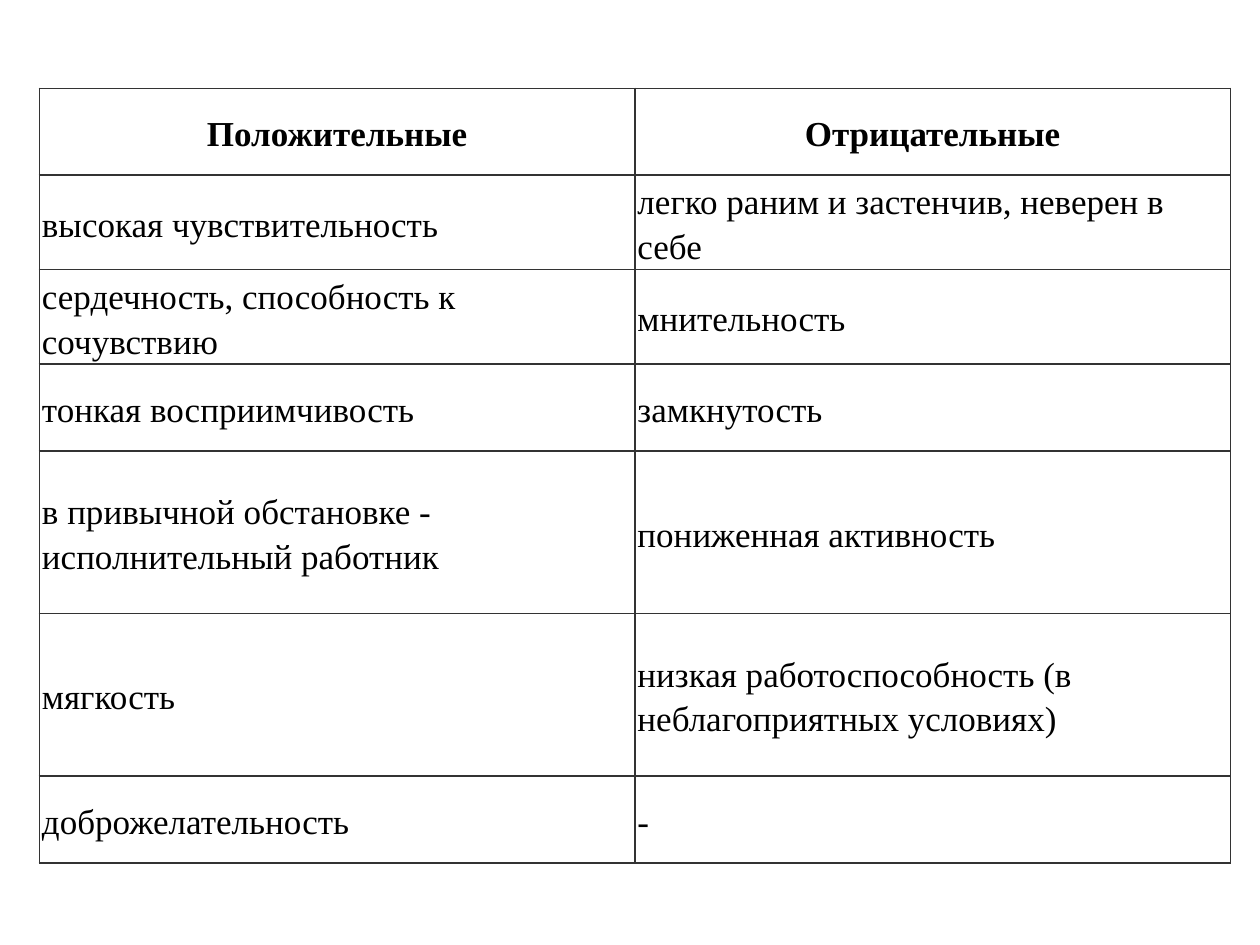
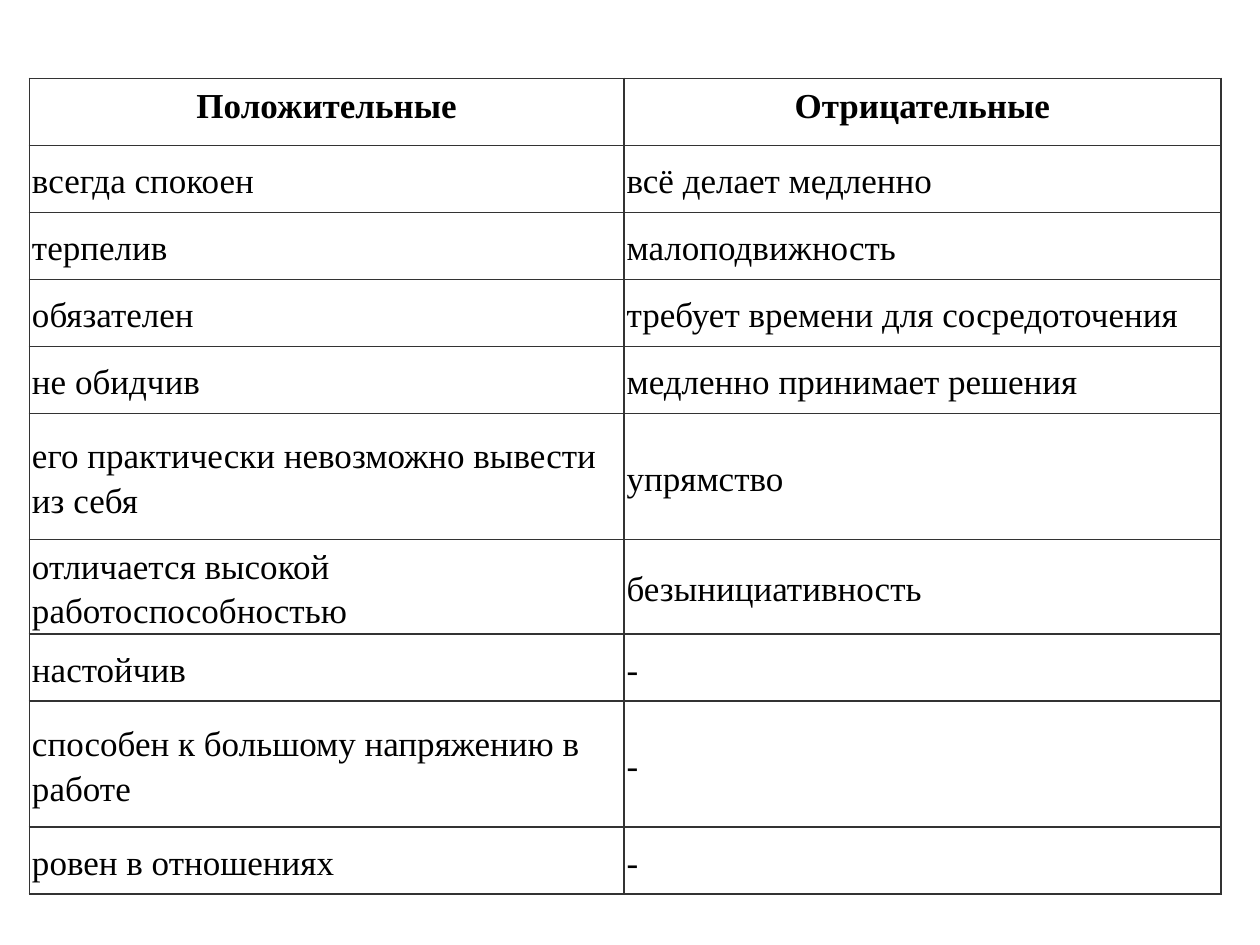
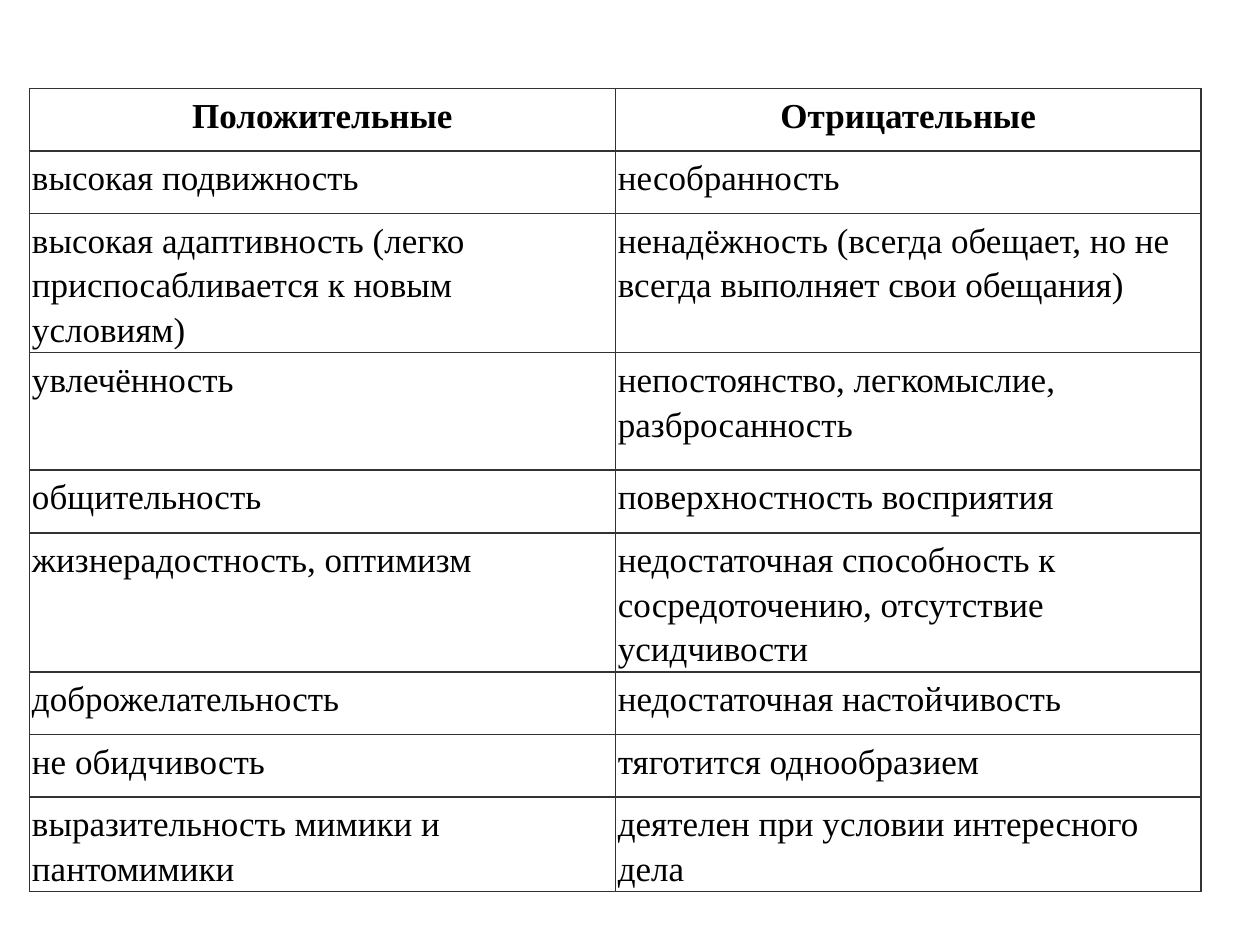
from dataclasses import dataclass

from lxml.etree import SubElement
from pptx import Presentation
from pptx.dml.color import RGBColor
from pptx.enum.text import MSO_ANCHOR, PP_ALIGN
from pptx.oxml.ns import qn
from pptx.util import Pt

FONT = "Times New Roman"
INK = "000000"
PAPER = "FFFFFF"
RULE = "333333"
HEAD = ("Положительные", "Отрицательные")
TOP, MID = MSO_ANCHOR.TOP, MSO_ANCHOR.MIDDLE


@dataclass
class Row:
    good: str
    bad: str
    high: float


@dataclass
class Grid:
    left: float
    top: float
    cols: tuple[float, float]
    head: float
    rows: list[Row]
    head_at: MSO_ANCHOR = TOP
    body_at: MSO_ANCHOR = TOP


def color(code: str) -> RGBColor:
    return RGBColor.from_string(code)


def write(cell, text: str, *, bold: bool = False, align=PP_ALIGN.LEFT,
          anchor=TOP, size: float = 20, ink: str = INK) -> None:
    cell.vertical_anchor = anchor
    cell.margin_left = cell.margin_right = Pt(1.5)
    cell.margin_top = cell.margin_bottom = Pt(1.5)
    para = cell.text_frame.paragraphs[0]
    para.alignment = align
    para.line_spacing = 1.15
    run = para.add_run()
    run.text = text
    run.font.name = FONT
    run.font.size = Pt(size)
    run.font.bold = bold
    run.font.color.rgb = color(ink)


def frame(cell) -> None:
    props = cell._tc.get_or_add_tcPr()
    for side in ("L", "R", "T", "B"):
        line = SubElement(props, qn(f"a:ln{side}"), w=str(Pt(1)))
        fill = SubElement(line, qn("a:solidFill"))
        SubElement(fill, qn("a:srgbClr"), val=RULE)
    cell.fill.solid()
    cell.fill.fore_color.rgb = color(PAPER)


def draw(slide, grid: Grid) -> None:
    rows = [Row(*HEAD, grid.head), *grid.rows]
    shape = slide.shapes.add_table(
        len(rows), len(HEAD), Pt(grid.left), Pt(grid.top),
        Pt(sum(grid.cols)), Pt(sum(row.high for row in rows)))
    table = shape.table
    table.first_row = table.horz_banding = False
    for col, wide in zip(table.columns, grid.cols):
        col.width = Pt(wide)
    for num, row in enumerate(rows):
        table.rows[num].height = Pt(row.high)
        first = num == 0
        for col, text in enumerate((row.good, row.bad)):
            cell = table.cell(num, col)
            frame(cell)
            write(cell, text, bold=first,
                  align=PP_ALIGN.CENTER if first else PP_ALIGN.LEFT,
                  anchor=grid.head_at if first else grid.body_at)


GRIDS = [
    Grid(22.5, 50.5, (340.3, 340.3), 49.6, [
        Row("высокая чувствительность",
            "легко раним и застенчив, неверен в себе", 49.6),
        Row("сердечность, способность к сочувствию", "мнительность", 49.6),
        Row("тонкая восприимчивость", "замкнутость", 49.6),
        Row("в привычной обстановке - исполнительный работник",
            "пониженная активность", 92.9),
        Row("мягкость",
            "низкая работоспособность (в неблагоприятных условиях)", 92.9),
        Row("доброжелательность", "-", 49.6),
    ], head_at=MID, body_at=MID),
    Grid(16.8, 44.8, (339.8, 341), 38.3, [
        Row("всегда спокоен", "всё делает медленно", 38.3),
        Row("терпелив", "малоподвижность", 38.3),
        Row("обязателен", "требует времени для сосредоточения", 38.3),
        Row("не обидчив", "медленно принимает решения", 38.3),
        Row("его практически невозможно вывести из себя", "упрямство", 72),
        Row("отличается высокой работоспособностью",
            "безынициативность", 38.3),
        Row("настойчив", "-", 38.3),
        Row("способен к большому напряжению в работе", "-", 72),
        Row("ровен в отношениях", "-", 38.3),
    ], body_at=MID),
    Grid(16.8, 50.5, (334.8, 334.8), 35.8, [
        Row("высокая подвижность", "несобранность", 35.8),
        Row("высокая адаптивность (легко приспосабливается к новым условиям)",
            "ненадёжность (всегда обещает, но не всегда выполняет свои "
            "обещания)", 67.1),
        Row("увлечённость", "непостоянство, легкомыслие, разбросанность",
            67.1),
        Row("общительность", "поверхностность восприятия", 35.8),
        Row("жизнерадостность, оптимизм",
            "недостаточная способность к сосредоточению, отсутствие "
            "усидчивости", 67.1),
        Row("доброжелательность", "недостаточная настойчивость", 35.8),
        Row("не обидчивость", "тяготится однообразием", 35.8),
        Row("выразительность мимики и пантомимики",
            "деятелен при условии интересного дела", 35.8),
    ]),
]


def main() -> None:
    deck = Presentation()
    deck.slide_width, deck.slide_height = Pt(720), Pt(540)
    for grid in GRIDS:
        draw(deck.slides.add_slide(deck.slide_layouts[6]), grid)
    deck.save("out.pptx")


if __name__ == "__main__":
    main()
